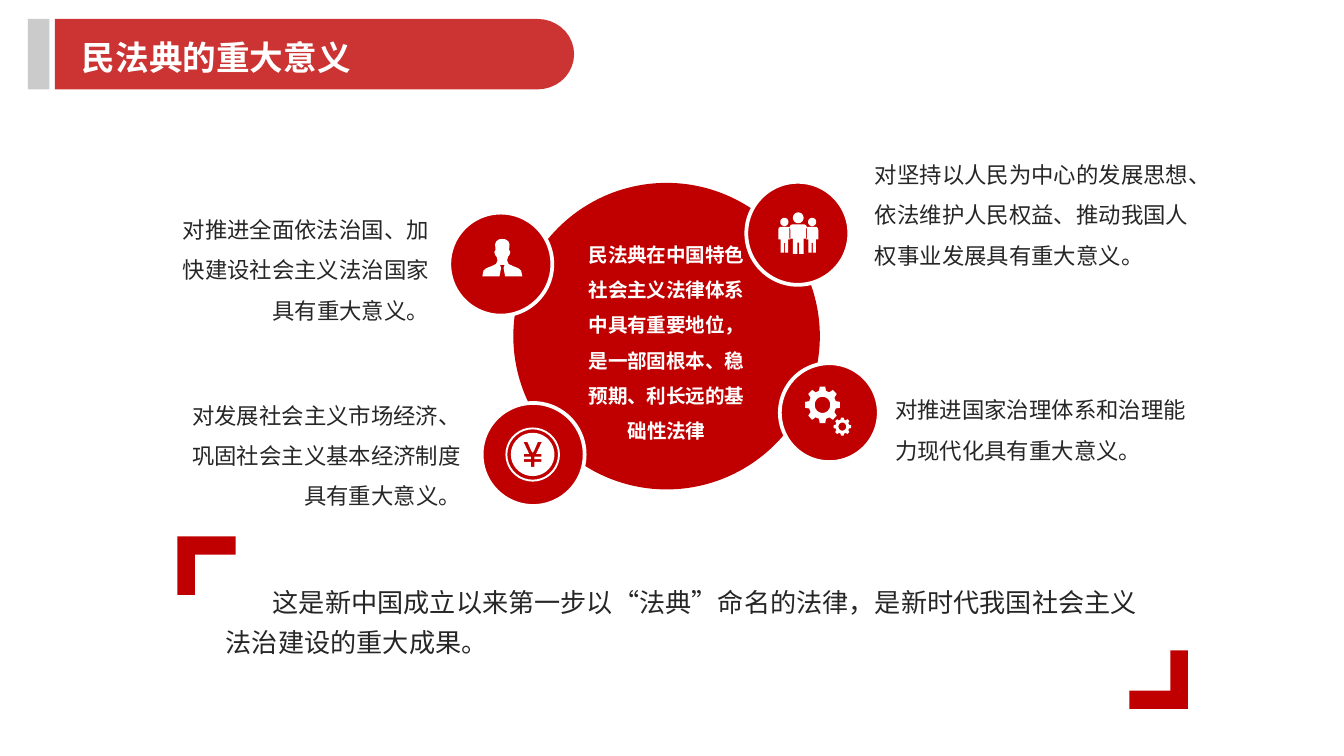
from dataclasses import dataclass
from math import cos, radians, sin

from pptx import Presentation
from pptx.dml.color import RGBColor
from pptx.enum.shapes import MSO_SHAPE
from pptx.enum.text import MSO_AUTO_SIZE, PP_ALIGN
from pptx.oxml.ns import qn
from pptx.oxml.xmlchemy import OxmlElement
from pptx.util import Pt

OVAL, RECT = MSO_SHAPE.OVAL, MSO_SHAPE.RECTANGLE
LEFT, CENTER, RIGHT = PP_ALIGN.LEFT, PP_ALIGN.CENTER, PP_ALIGN.RIGHT
GROW = MSO_AUTO_SIZE.SHAPE_TO_FIT_TEXT


@dataclass(frozen=True)
class Theme:
    """Colours, font and type sizes of the deck."""
    red: str = "C00000"
    gray: str = "BFBFBF"
    ink: str = "262626"
    white: str = "FFFFFF"
    font: str = "Noto Sans CJK SC"
    title: float = 18
    quote: float = 14
    body: float = 12
    hub: float = 10.5


T = Theme()


def paint(sp, color, alpha=None, ring=False):
    """Fill a shape, with optional opacity in percent and a white ring."""
    sp.shadow.inherit = False
    sp.fill.solid()
    sp.fill.fore_color.rgb = RGBColor.from_string(color)
    if alpha:
        el = OxmlElement("a:alpha")
        el.set("val", str(alpha * 1000))
        sp._element.spPr.find(".//" + qn("a:srgbClr")).append(el)
    if ring:
        sp.line.color.rgb = RGBColor.from_string(T.white)
        sp.line.width = Pt(2)
    else:
        sp.line.fill.background()


def add_preset(s, kind, box, color, **style):
    """Add a painted preset shape."""
    paint(s.shapes.add_shape(kind, *map(Pt, box)), color, **style)


def add_outline(s, box, contours, color, alpha=None):
    """Add one freeform from contours given in percent of the box."""
    x, y, w, h = box
    fb = None
    for contour in contours:
        pts = [(Pt(x + w * a / 100), Pt(y + h * b / 100)) for a, b in contour]
        if fb is None:
            fb = s.shapes.build_freeform(*pts[0], scale=1.0)
        else:
            fb.move_to(*pts[0])
        fb.add_line_segments(pts[1:], close=True)
    paint(fb.convert_to_shape(), color, alpha)


def add_text(s, box, text, size, color=T.ink, bold=False, align=LEFT,
             spacing=None, inset=(5.04, 2.88), indent=0):
    """Add a wrapped one-paragraph text box."""
    tf = s.shapes.add_textbox(*map(Pt, box)).text_frame
    tf.word_wrap = True
    tf.auto_size = GROW
    tf.margin_left = tf.margin_right = Pt(inset[0])
    tf.margin_top = tf.margin_bottom = Pt(inset[1])
    p = tf.paragraphs[0]
    p.alignment = align
    if spacing:
        p.line_spacing = spacing
    if indent:
        p._p.get_or_add_pPr().set("indent", str(Pt(indent)))
    r = p.add_run()
    r.text = text
    r.font.size = Pt(size)
    r.font.bold = bold
    r.font.name = T.font
    r.font.color.rgb = RGBColor.from_string(color)
    ea = OxmlElement("a:ea")
    ea.set("typeface", T.font)
    r._r.get_or_add_rPr().find(qn("a:latin")).addnext(ea)


def arc(cx, cy, rx, ry, start=0, stop=360, step=10):
    """Return points along an ellipse."""
    return [(cx + rx * cos(radians(a)), cy + ry * sin(radians(a)))
            for a in range(start, stop + 1, step)]


def circle(r, cx=50, cy=50):
    """Return the contour of a circle."""
    return arc(cx, cy, r, r)


def mirrored(half, cx=50):
    """Close a right half by mirroring it about a vertical axis."""
    return half + [(2 * cx - x, y) for x, y in reversed(half)]


def figure(cx, top, w, h):
    """Return the body contour of a standing figure."""
    half = [(.36, 0), (.46, .04), (.5, .12), (.5, .48), (.3, .48), (.3, 1),
            (.05, 1), (.05, .62)]
    return mirrored([(cx + w * x, top + h * y) for x, y in half], cx)


def draw_person(s, box):
    """Draw a bust with a tie."""
    half = [(50, 2), (58, 3), (65, 8), (68, 16), (67, 31), (70, 36), (68, 44),
            (64, 49), (62, 59), (66, 68), (76, 73), (90, 79), (97, 85),
            (100, 100), (57, 100), (53, 78), (56, 70)]
    add_outline(s, box, [mirrored(half)], T.white)


def draw_team(s, box):
    """Draw three standing figures."""
    add_outline(s, box, [
        circle(13, 50, 13), figure(50, 29, 43, 71),
        *[c for cx in (16, 84)
          for c in (circle(10, cx, 23), figure(cx, 35, 30, 62))]], T.white)


def draw_coin(s, box):
    """Draw a ringed coin with a yuan sign cut out."""
    x, y, w, h = box
    yuan = mirrored([(50, 46), (53, 42), (62, 21), (71, 21), (58, 49),
                     (70, 49), (70, 55), (54, 55), (54, 61), (70, 61),
                     (70, 67), (54, 67), (54, 79)])
    add_outline(s, box, [circle(50), circle(46.5)], T.white)
    add_outline(s, (x + w * .1, y + h * .1, w * .8, h * .8),
                [circle(50), yuan], T.white)


def draw_gears(s, box):
    """Draw a large gear and a small one at its lower right."""
    x, y, w, h = box
    teeth = [(50 + r * cos(radians(a + d)), 50 + r * sin(radians(a + d)))
             for a in range(0, 360, 45)
             for d, r in ((-15, 39), (-9, 50), (9, 50), (15, 39))]
    for gx, gy, size in ((x, y, .76), (x + w * .62, y + h * .64, .38)):
        add_outline(s, (gx, gy, w * size, h * size),
                    [teeth, circle(22)], T.white)


def draw_header(s, box, title):
    """Draw the gray tab, the rounded banner and the title."""
    x, y, w, h = box
    add_preset(s, RECT, (x, y, 11.5, h), T.gray, alpha=80)
    banner = [(0, 0), *arc(93, 50, 7, 50, -90, 90), (0, 100)]
    add_outline(s, (x + 14.4, y, w - 14.4, h), [banner], T.red, alpha=80)
    add_text(s, (x + 23.8, y + 6.5, 267.8, 27.4), title, T.title, T.white, True)


def draw_hub(s, box, text):
    """Draw the central disc with its statement."""
    x, y, w, h = box
    add_preset(s, OVAL, box, T.red)
    add_text(s, (x + 28.8, y + 22.3, w - 57.6, 121.7), text, T.hub, T.white,
             True, CENTER, 1.5, (7.2, 3.6))


def draw_point(s, box, icon, icon_box, text_box, text, align):
    """Draw a ringed badge with its icon and its text."""
    add_preset(s, OVAL, box, T.red, ring=True)
    icon(s, icon_box)
    add_text(s, text_box, text, T.body, align=align, spacing=1.5)


def draw_quote(s, box, text):
    """Draw the closing statement between two corner brackets."""
    x, y, w, h = box
    side = 31.3
    corner = [(0, 0), (100, 0), (100, 31), (30, 31), (30, 100), (0, 100)]
    turned = [(100 - a, 100 - b) for a, b in corner]
    add_outline(s, (x, y, side, side), [corner], T.red)
    add_outline(s, (x + w - side, y + h - side, side, side), [turned], T.red)
    add_text(s, (x + 20.9, y + 18.6, 504.7, 47.5), text, T.quote,
             spacing=1.3, indent=25.2)


def main():
    """Build and save the slide."""
    prs = Presentation()
    prs.slide_width, prs.slide_height = Pt(720), Pt(405)
    s = prs.slides.add_slide(prs.slide_layouts[6])
    draw_header(s, (15, 10.2, 292.6, 37.7), "民法典的重大意义")
    draw_hub(s, (275, 98, 164.2, 164.2),
             "民法典在中国特色社会主义法律体系中具有重要地位，是一部固根本、稳预期、利长远的基础性法律")
    points = [
        ((240.7, 113.9, 55.2, 55.2), draw_person, (258.4, 127.6, 21.4, 20.4),
         (81.5, 105.8, 153.4, 70.6), "对推进全面依法治国、加快建设社会主义法治国家具有重大意义。", RIGHT),
        ((399.8, 97.4, 55.2, 55.2), draw_team, (416.7, 113.8, 21.9, 22.2),
         (463.7, 76.3, 184.3, 70.6), "对坚持以人民为中心的发展思想、依法维护人民权益、推动我国人权事业发展具有重大意义。", LEFT),
        ((258, 215.9, 55.2, 55.2), draw_coin, (270.8, 229, 29.2, 29),
         (95, 205.2, 157, 70.6), "对发展社会主义市场经济、巩固社会主义基本经济制度具有重大意义。", RIGHT),
        ((417.8, 194.6, 53, 53), draw_gears, (431.2, 207, 24.8, 26),
         (474.5, 202.3, 177.1, 49), "对推进国家治理体系和治理能力现代化具有重大意义。", LEFT),
    ]
    for point in points:
        draw_point(s, *point)
    draw_quote(s, (95, 287.4, 541.4, 92.4),
               "这是新中国成立以来第一步以“法典”命名的法律，是新时代我国社会主义法治建设的重大成果。")
    prs.save("out.pptx")


if __name__ == "__main__":
    main()
